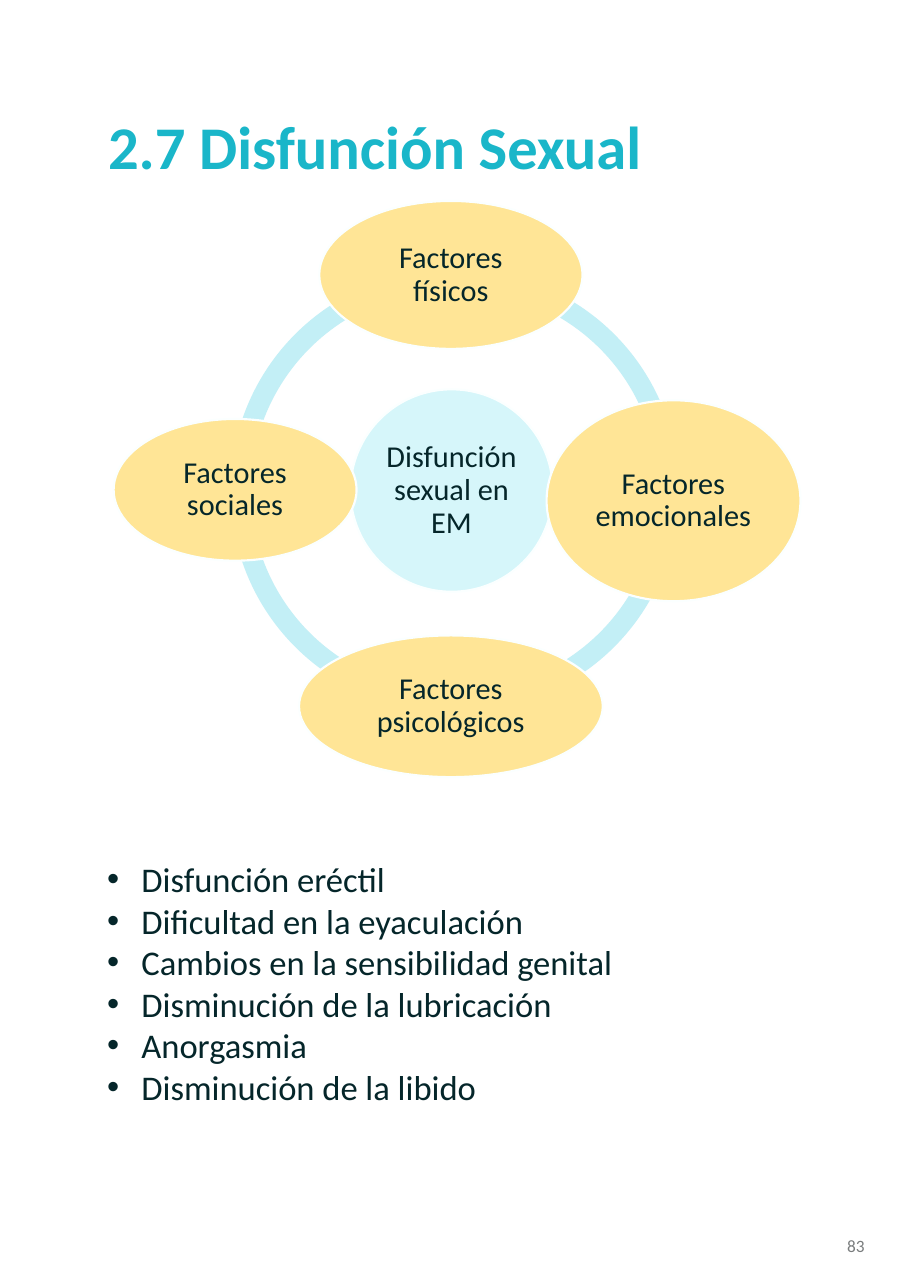
"""Build the slide on sexual dysfunction with its wheel of factors."""
from dataclasses import dataclass

from lxml import etree
from pptx import Presentation
from pptx import util as u
from pptx.dml.color import RGBColor
from pptx.enum import shapes, text
from pptx.oxml import ns


@dataclass(frozen=True)
class Theme:
    """Colours, font and type sizes of the slide."""
    font: str = "Calibri"
    title: str = "1AB6C9"
    ink: str = "05262A"
    number: str = "797C7D"
    ring: str = "C3EFF6"
    hub: str = "D6F6FA"
    factor: str = "FFE596"
    outline: str = "FBFFFF"
    title_size: int = 28
    list_size: int = 16
    label_size: int = 14
    number_size: int = 8


class SlideBuilder:
    """Hold the theme and the current slide."""

    def __init__(self, prs, theme):
        """Add a blank slide with a group for the wheel."""
        self.theme = theme
        self.s = prs.slides.add_slide(prs.slide_layouts[6])
        self.wheel = None

    def start_wheel(self):
        """Open the group that receives the wheel's shapes."""
        self.wheel = self.s.shapes.add_group_shape()

    def fill_text(self, sp, lines, size, color, frame=None, para=None, bold=False):
        """Fill a shape with paragraphs in one format."""
        tf = sp.text_frame
        for name, value in {"word_wrap": True, **(frame or {})}.items():
            setattr(tf, name, value)
        for i, line in enumerate(lines):
            p = tf.paragraphs[0] if i == 0 else tf.add_paragraph()
            for name, value in (para or {}).items():
                setattr(p, name, value)
            r = p.add_run()
            r.text = line
            fmt = {"name": self.theme.font, "size": u.Pt(size), "bold": bold}
            for name, value in fmt.items():
                setattr(r.font, name, value)
            r.font.color.rgb = RGBColor.from_string(color)

    def text_box(self, box, lines, size, color, **formats):
        """Add a text box and return it."""
        sp = self.s.shapes.add_textbox(*map(u.Inches, box))
        self.fill_text(sp, lines, size, color, **formats)
        return sp

    def bullets(self, box, lines):
        """Add a bulleted list."""
        sp = self.text_box(box, lines, self.theme.list_size, self.theme.ink,
                           frame={"auto_size": text.MSO_AUTO_SIZE.SHAPE_TO_FIT_TEXT})
        indent = u.Inches(0.22)
        for p in sp.text_frame.paragraphs:
            pPr = p._p.get_or_add_pPr()
            for name, value in {"marL": indent, "indent": -indent}.items():
                pPr.set(name, str(value))
            etree.SubElement(pPr, ns.qn("a:buFont"), typeface="Arial")
            etree.SubElement(pPr, ns.qn("a:buChar"), char="•")

    def shape(self, kind, box, fill):
        """Add a flat filled shape to the wheel and return it."""
        sp = self.wheel.shapes.add_shape(kind, *map(u.Inches, box))
        sp.shadow.inherit = False
        sp.fill.solid()
        sp.fill.fore_color.rgb = RGBColor.from_string(fill)
        sp.line.fill.background()
        return sp

    def arc(self, left, start, end):
        """Add a ring segment between two angles in degrees."""
        sp = self.shape(shapes.MSO_SHAPE.BLOCK_ARC, (left, 1.73, 2.84, 2.84), self.theme.ring)
        for i, value in enumerate((start * 0.6, end * 0.6, 0.046)):
            sp.adjustments[i] = value

    def bubble(self, box, label, fill):
        """Add a labelled ellipse."""
        sp = self.shape(shapes.MSO_SHAPE.OVAL, box, fill)
        sp.line.color.rgb = RGBColor.from_string(self.theme.outline)
        sp.line.width = u.Pt(1)
        frame = {f"margin_{side}": u.Inches(0.02) for side in ("left", "top", "right", "bottom")}
        frame["vertical_anchor"] = text.MSO_ANCHOR.MIDDLE
        self.fill_text(sp, [label], self.theme.label_size, self.theme.ink, frame=frame,
                       para={"alignment": text.PP_ALIGN.CENTER, "line_spacing": 0.9})


def main():
    """Build and save the slide."""
    prs = Presentation()
    prs.slide_width, prs.slide_height = u.Inches(5.83), u.Inches(8.27)
    theme = Theme()
    slide = SlideBuilder(prs, theme)
    middle = {"vertical_anchor": text.MSO_ANCHOR.MIDDLE}

    slide.text_box((-0.11, 0.16, 5.03, 1.6), ["2.7 Disfunción Sexual"],
                   theme.title_size, theme.title, frame=middle, bold=True,
                   para={"alignment": text.PP_ALIGN.CENTER, "line_spacing": 0.9})
    slide.bullets((0.59, 5.46, 4.66, 1.72), [
        "Disfunción eréctil",
        "Dificultad en la eyaculación",
        "Cambios en la sensibilidad genital",
        "Disminución de la lubricación",
        "Anorgasmia",
        "Disminución de la libido",
    ])

    slide.start_wheel()
    for left, start, end in ((1.48, 180, 270), (1.48, 90, 180),
                             (1.52, 2.66, 91.55), (1.52, 268.45, 2.7)):
        slide.arc(left, start, end)
    slide.bubble((2.25, 2.5, 1.3, 1.3), "Disfunción sexual en EM", theme.hub)
    factors = {
        "físicos": (2.05, 1.29, 1.69, 0.95),
        "emocionales": (3.51, 2.57, 1.63, 1.29),
        "psicológicos": (1.92, 4.08, 1.95, 0.91),
        "sociales": (0.73, 2.69, 1.56, 0.91),
    }
    for name, box in factors.items():
        slide.bubble(box, f"Factores {name}", theme.factor)

    slide.text_box((4.34, 7.78, 1.31, 0.44), ["83"], theme.number_size, theme.number,
                   frame=middle, para={"alignment": text.PP_ALIGN.RIGHT})
    prs.save("out.pptx")


if __name__ == "__main__":
    main()
